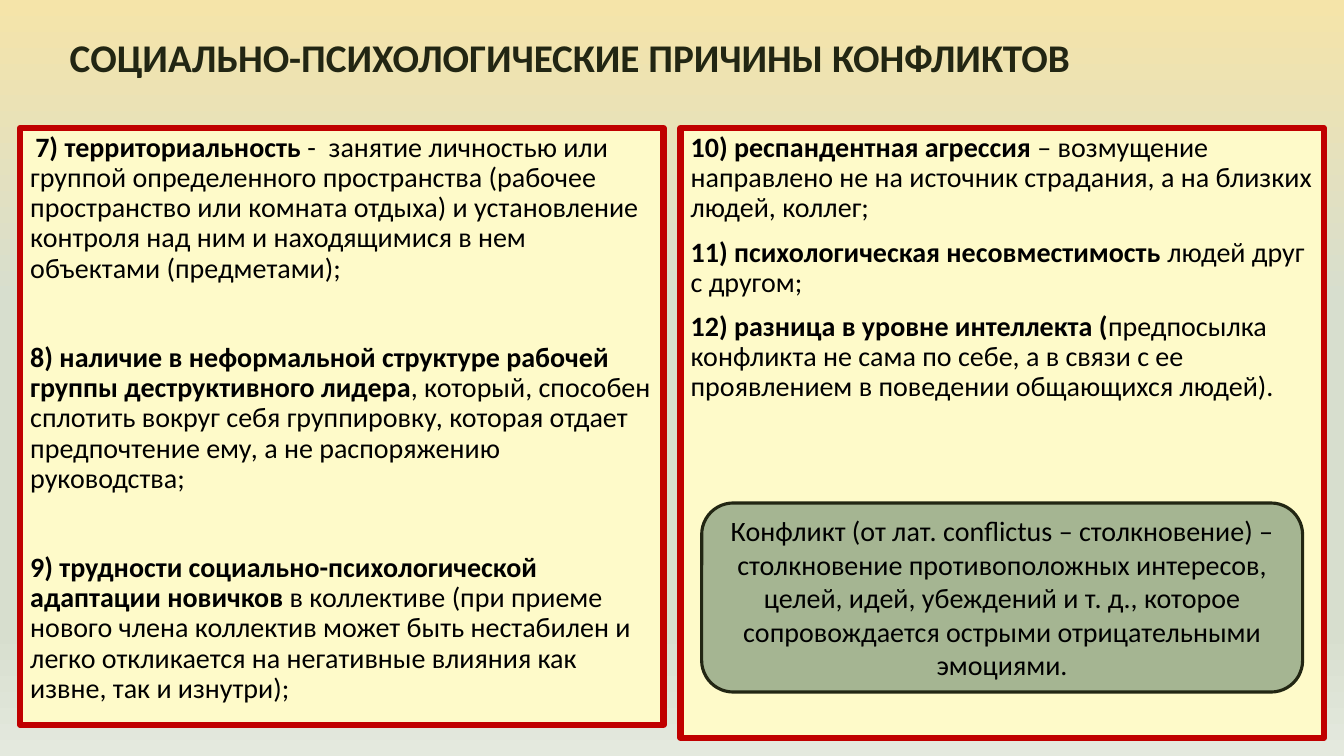
from copy import deepcopy
from dataclasses import dataclass

from pptx import Presentation
from pptx.dml.color import RGBColor
from pptx.enum.shapes import MSO_SHAPE
from pptx.enum.text import MSO_ANCHOR, MSO_AUTO_SIZE, PP_ALIGN
from pptx.oxml.ns import qn
from pptx.util import Inches, Pt

ROUNDED = MSO_SHAPE.ROUNDED_RECTANGLE
MIDDLE, TOP = MSO_ANCHOR.MIDDLE, MSO_ANCHOR.TOP
NO_AUTOFIT = MSO_AUTO_SIZE.NONE
LEFT, CENTER = PP_ALIGN.LEFT, PP_ALIGN.CENTER


@dataclass(frozen=True)
class Theme:
    font: str = "Calibri"
    title_size: float = 28
    body_size: float = 20
    dark: str = "222613"
    text: str = "000000"
    panel: str = "FEFAC9"
    frame: str = "C00000"
    note: str = "A5B592"
    frame_width: float = 4.5
    note_width: float = 2.25
    background: tuple = ((0, "F5E4A9"), (0.4, "D7DECE"),
                         (0.83, "D7DECE"), (1, "E4E9DE"))


THEME = Theme()
WIDTH, HEIGHT = 13.33, 7.5
MARGIN = 0.2
PANEL_TOP = 1.27
PANEL_WIDTH = 6.38
COLUMN_STEP = WIDTH - 2 * MARGIN - PANEL_WIDTH
NOTE_INSET = 0.21
ITEM_GAP, WIDE_GAP = 10, 42

TITLE = "СОЦИАЛЬНО-ПСИХОЛОГИЧЕСКИЕ ПРИЧИНЫ КОНФЛИКТОВ"
LEFT_CAUSES = [
    ("7) территориальность",
     " -  занятие личностью или группой определенного пространства (рабочее "
     "пространство или комната отдыха) и установление контроля над ним и "
     "находящимися в нем объектами (предметами);"),
    ("8) наличие в неформальной структуре рабочей группы деструктивного лидера",
     ", который, способен сплотить вокруг себя группировку, которая отдает "
     "предпочтение ему, а не распоряжению руководства;"),
    ("9) трудности социально-психологической адаптации новичков ",
     "в коллективе (при приеме нового члена коллектив может быть нестабилен и "
     "легко откликается на негативные влияния как извне, так и изнутри);"),
]
RIGHT_CAUSES = [
    ("10) респандентная агрессия ",
     "– возмущение направлено не на источник страдания, а на близких людей, "
     "коллег;"),
    ("11) психологическая несовместимость ", "людей друг с другом;"),
    ("12) разница в уровне интеллекта (",
     "предпосылка конфликта не сама по себе, а в связи с ее проявлением в "
     "поведении общающихся людей)."),
]
DEFINITION = (
    "Конфликт (от лат. сonflictus – столкновение) – столкновение "
    "противоположных интересов, целей, идей, убеждений и т. д., которое "
    "сопровождается острыми отрицательными эмоциями.")


def place(sp, left, top, width, height):
    sp.left, sp.top = Inches(left), Inches(top)
    sp.width, sp.height = Inches(width), Inches(height)


def paint(sp, fill, line, width):
    sp.fill.solid()
    sp.fill.fore_color.rgb = RGBColor.from_string(fill)
    sp.line.color.rgb = RGBColor.from_string(line)
    sp.line.width = Pt(width)


def set_frame(sp, anchor):
    tf = sp.text_frame
    tf.word_wrap = True
    tf.auto_size = NO_AUTOFIT
    tf.vertical_anchor = anchor
    return tf


def style(p, size, color, align, bold=None):
    p.alignment = align
    p.font.name = THEME.font
    p.font.size = Pt(size)
    p.font.bold = bold
    p.font.color.rgb = RGBColor.from_string(color)


def remove_bullet(p, indent):
    pPr = p._p.get_or_add_pPr()
    pPr.set("marL", "0")
    pPr.set("indent", str(Inches(indent)))
    pPr.insert_element_before(pPr.makeelement(qn("a:buNone"), {}),
                              "a:tabLst", "a:defRPr", "a:extLst")


def set_background(s):
    fill = s.background.fill
    fill.gradient()
    fill.gradient_angle = 270
    first = fill.gradient_stops[0]._gs
    for _ in range(len(THEME.background) - len(fill.gradient_stops)):
        first.addnext(deepcopy(first))
    for stop, (position, color) in zip(fill.gradient_stops, THEME.background):
        stop.position = position
        stop.color.rgb = RGBColor.from_string(color)


def set_title(sp, text):
    place(sp, 0.59, 0.25, 10.58, 0.69)
    p = set_frame(sp, MIDDLE).paragraphs[0]
    p.text = text
    p.line_spacing = 0.9
    style(p, THEME.title_size, THEME.dark, LEFT, True)


def fill_panel(sp, column, height, causes, gap, first_indent=0):
    place(sp, MARGIN + column * COLUMN_STEP, PANEL_TOP, PANEL_WIDTH, height)
    paint(sp, THEME.panel, THEME.frame, THEME.frame_width)
    tf = set_frame(sp, TOP)
    for i, (term, explanation) in enumerate(causes):
        p = tf.add_paragraph() if i else tf.paragraphs[0]
        r = p.add_run()
        r.text = term
        r.font.bold = True
        p.add_run().text = explanation
        p.line_spacing = 0.9
        p.space_before = Pt(gap if i else ITEM_GAP)
        style(p, THEME.body_size, THEME.text, LEFT)
        remove_bullet(p, 0 if i else first_indent)


def add_definition(s, text):
    sp = s.shapes.add_shape(ROUNDED, 0, 0, 0, 0)
    place(sp, MARGIN + COLUMN_STEP + NOTE_INSET, 4.99,
          PANEL_WIDTH - 2 * NOTE_INSET, HEIGHT / 4)
    sp.shadow.inherit = False
    paint(sp, THEME.note, THEME.dark, THEME.note_width)
    p = set_frame(sp, MIDDLE).paragraphs[0]
    p.text = text
    style(p, THEME.body_size, THEME.text, CENTER)


def main():
    prs = Presentation()
    prs.slide_width, prs.slide_height = Inches(WIDTH), Inches(HEIGHT)
    s = prs.slides.add_slide(prs.slide_layouts[3])
    title, left_panel, right_panel = list(s.placeholders)[:3]
    set_background(s)
    set_title(title, TITLE)
    fill_panel(left_panel, 0, 5.92, LEFT_CAUSES, WIDE_GAP, 0.05)
    fill_panel(right_panel, 1, 6.05, RIGHT_CAUSES, ITEM_GAP)
    add_definition(s, DEFINITION)
    prs.save("out.pptx")


if __name__ == "__main__":
    main()
